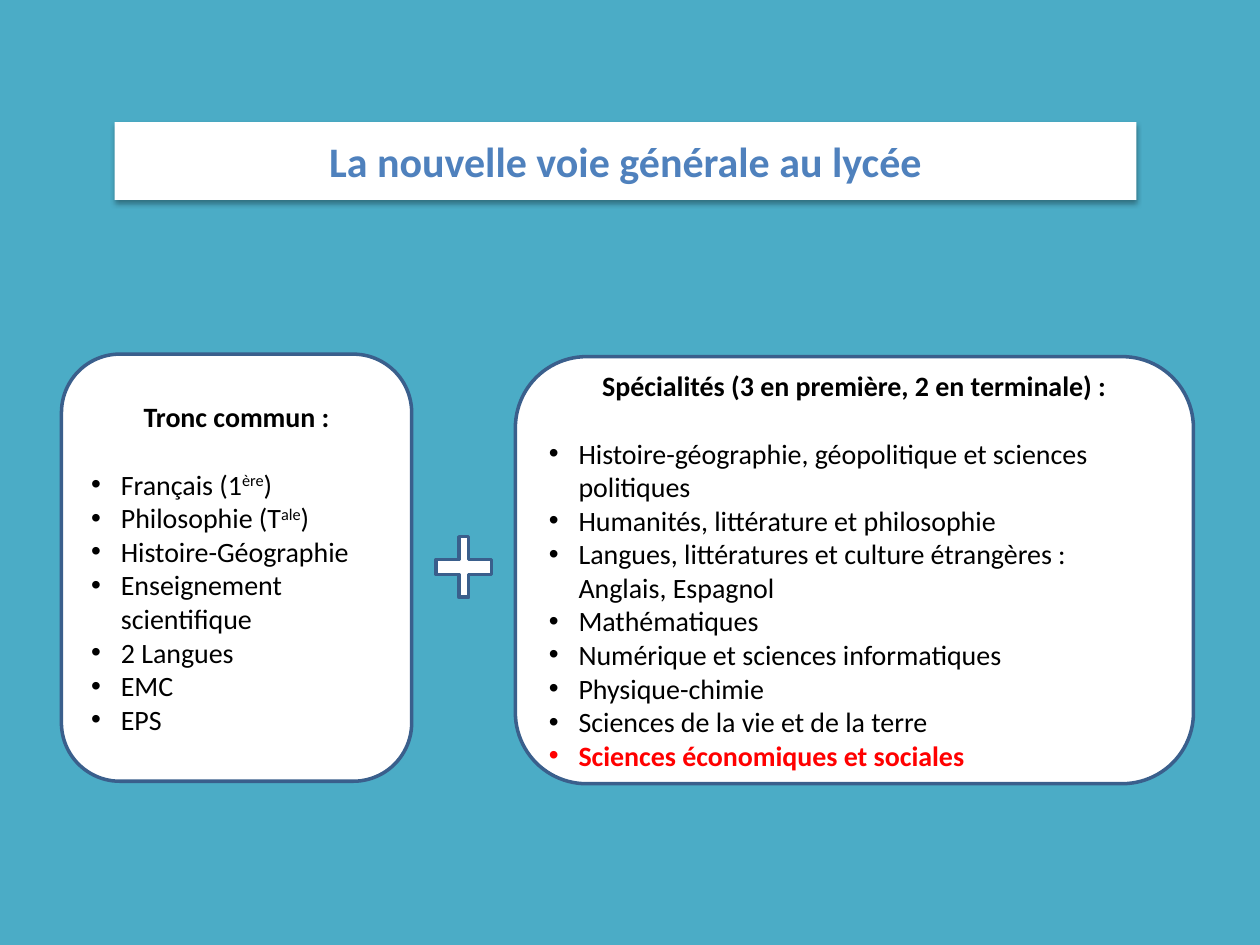
from lxml.etree import SubElement
from pptx import Presentation
from pptx.dml.color import RGBColor
from pptx.enum.shapes import MSO_SHAPE
from pptx.enum.text import MSO_ANCHOR, MSO_AUTO_SIZE, PP_ALIGN
from pptx.oxml import parse_xml
from pptx.oxml.ns import nsdecls, qn
from pptx.util import Cm, Pt

TEAL = RGBColor(0x4B, 0xAC, 0xC6)
WHITE = RGBColor(0xFF, 0xFF, 0xFF)
BLACK = RGBColor(0x00, 0x00, 0x00)
RED = RGBColor(0xFF, 0x00, 0x00)
BLUE = RGBColor(0x4F, 0x81, 0xBD)
NAVY = RGBColor(0x3A, 0x5F, 0x8C)

COMMON_CORE = [
    ["Français (1", "ère", ")"],
    ["Philosophie (T", "ale", ")"],
    ["Histoire-Géographie"],
    ["Enseignement scientifique"],
    ["2 Langues"],
    ["EMC"],
    ["EPS"],
]
SPECIALTIES = [
    ["Histoire-géographie, géopolitique et sciences politiques"],
    ["Humanités, littérature et philosophie"],
    ["Langues, littératures et culture étrangères : Anglais, Espagnol"],
    ["Mathématiques"],
    ["Numérique et sciences informatiques"],
    ["Physique-chimie"],
    ["Sciences de la vie et de la terre"],
    ["Sciences économiques et sociales"],
]
HIGHLIGHT = "Sciences économiques et sociales"


def place_rounded(holder, left, top, width, height):
    """Turn a placeholder into a white rounded card in the given box."""
    holder.left, holder.top = Cm(left), Cm(top)
    holder.width, holder.height = Cm(width), Cm(height)
    holder._element.spPr.append(parse_xml(
        f'<a:prstGeom {nsdecls("a")} prst="roundRect"><a:avLst/></a:prstGeom>'))
    holder.fill.solid()
    holder.fill.fore_color.rgb = WHITE
    frame = holder.text_frame
    frame.word_wrap = True
    frame.auto_size = MSO_AUTO_SIZE.NONE
    frame.vertical_anchor = MSO_ANCHOR.MIDDLE
    return frame


def outline(shape):
    """Draw the navy border shared by the cards and the plus sign."""
    shape.line.color.rgb = NAVY
    shape.line.width = Pt(2)


def add_span(para, text, size, color, bold=False):
    """Append one formatted run to a paragraph."""
    span = para.add_run()
    span.text = text
    span.font.name = "Calibri"
    span.font.size = Pt(size)
    span.font.bold = bold
    span.font.color.rgb = color
    return span


def set_bullet(para, symbol=None):
    """Give a paragraph a hanging bullet, or none at all."""
    properties = para._p.get_or_add_pPr()
    indent = Cm(0.6) if symbol else 0
    properties.set("marL", str(indent))
    properties.set("indent", str(-indent))
    if symbol:
        SubElement(properties, qn("a:buFont"), typeface="Arial")
        SubElement(properties, qn("a:buChar"), char=symbol)
    else:
        SubElement(properties, qn("a:buNone"))


def fill_title(holder, left, top, width, height):
    """Write the slide title on a card with a soft shadow."""
    para = place_rounded(holder, left, top, width, height).paragraphs[0]
    para.alignment = PP_ALIGN.CENTER
    add_span(para, "La nouvelle voie générale au lycée", 24, BLUE, True)
    holder._element.spPr.append(parse_xml(
        f'<a:effectLst {nsdecls("a")}><a:outerShdw blurRad="{Pt(3.1)}" '
        f'dist="{Pt(1.8)}" dir="5400000" rotWithShape="0">'
        '<a:srgbClr val="000000"><a:alpha val="35000"/></a:srgbClr>'
        '</a:outerShdw></a:effectLst>'))


def fill_subjects(holder, left, top, width, height, heading, subjects):
    """Write a heading and its bulleted subjects in a bordered card."""
    frame = place_rounded(holder, left, top, width, height)
    outline(holder)
    para = frame.paragraphs[0]
    para.alignment = PP_ALIGN.CENTER
    para.space_before, para.space_after = Pt(0), Pt(19.5)
    set_bullet(para)
    add_span(para, heading, 16, BLACK, True)
    for parts in subjects:
        para = frame.add_paragraph()
        para.alignment = PP_ALIGN.LEFT
        para.space_before = Pt(0)
        set_bullet(para, "•")
        marked = parts[0] == HIGHLIGHT
        for position, text in enumerate(parts):
            span = add_span(para, text, 16, RED if marked else BLACK, marked)
            if position == 1:
                span._r.get_or_add_rPr().set("baseline", "30000")


def add_plus(page, left, top, width, height):
    """Draw the plus sign between the two cards."""
    plus = page.shapes.add_shape(
        MSO_SHAPE.CROSS, Cm(left), Cm(top), Cm(width), Cm(height))
    plus.adjustments[0] = 0.41
    plus.shadow.inherit = False
    plus.fill.solid()
    plus.fill.fore_color.rgb = WHITE
    outline(plus)


def main():
    """Build and save the deck."""
    deck = Presentation()
    deck.slide_width, deck.slide_height = Cm(25.4), Cm(19.05)
    page = deck.slides.add_slide(deck.slide_layouts.get_by_name("Two Content"))
    page.background.fill.solid()
    page.background.fill.fore_color.rgb = TEAL
    title, core, specialties = page.placeholders
    fill_title(title, 2.31, 2.46, 20.6, 1.57)
    fill_subjects(core, 1.24, 7.14, 7.06, 8.61, "Tronc commun :", COMMON_CORE)
    fill_subjects(specialties, 10.39, 7.19, 13.67, 8.61,
                  "Spécialités (3 en première, 2 en terminale) :", SPECIALTIES)
    add_plus(page, 8.79, 10.82, 1.12, 1.22)
    deck.save("out.pptx")


if __name__ == "__main__":
    main()
